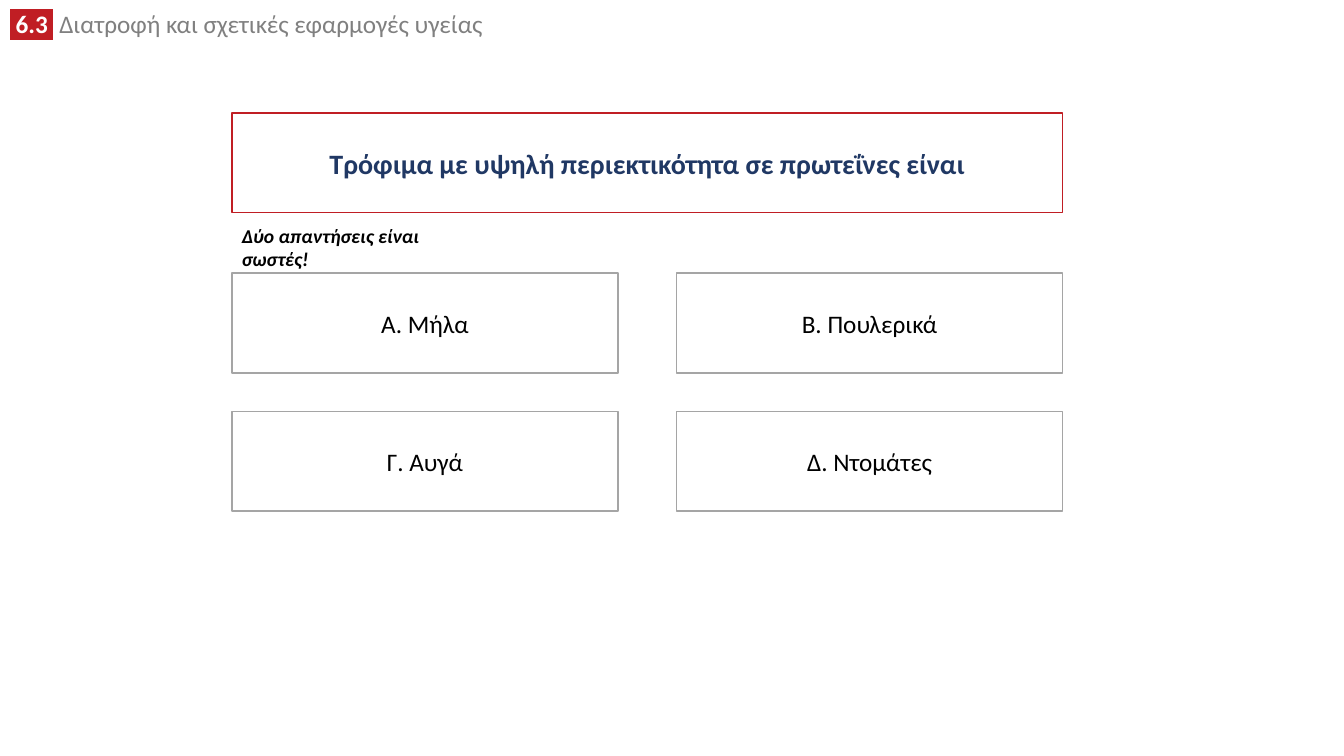
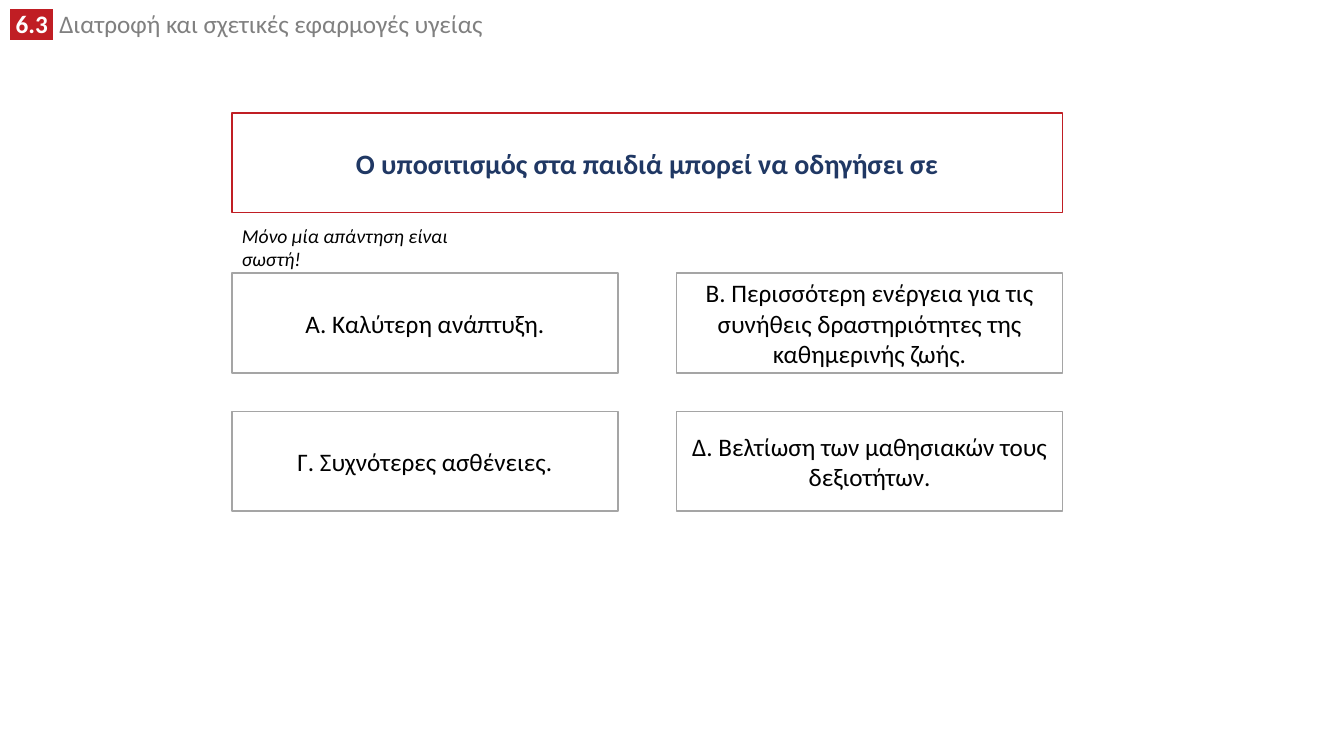
from lxml.etree import SubElement
from pptx import Presentation
from pptx.dml.color import RGBColor
from pptx.enum.shapes import MSO_SHAPE
from pptx.enum.text import MSO_ANCHOR, PP_ALIGN
from pptx.oxml import parse_xml
from pptx.oxml.ns import nsdecls, qn
from pptx.util import Inches, Pt

HUES = {
    "red": "C01E24", "navy": "203864", "gray": "808080",
    "edge": "A5A5A5", "black": "000000", "white": "FFFFFF",
}
FONT = "Calibri"
UNIT, TOPIC = " 6.3 ", " Διατροφή και σχετικές εφαρμογές υγείας"
QUIZ = [
    {
        "ask": "Τρόφιμα με υψηλή περιεκτικότητα σε πρωτεΐνες είναι",
        "hint": "Δύο απαντήσεις είναι σωστές!",
        "bold": True,
        "wide": 2.24,
        "picks": ["A. Μήλα", "B. Πουλερικά", "Γ. Αυγά", "Δ. Ντομάτες"],
    },
    {
        "ask": "Ο υποσιτισμός στα παιδιά μπορεί να οδηγήσει σε",
        "hint": "Μόνο μία απάντηση είναι σωστή!",
        "bold": False,
        "wide": 2.36,
        "picks": [
            "A. Καλύτερη ανάπτυξη.",
            "B. Περισσότερη ενέργεια για τις συνήθεις δραστηριότητες "
            "της καθημερινής ζωής.",
            "Γ. Συχνότερες ασθένειες.",
            "Δ. Βελτίωση των μαθησιακών τους δεξιοτήτων.",
        ],
    },
]
LEFT, TOP, SPAN, HIGH = 2.3, 1.12, 8.24, 0.99
GRID, COLS, CELL, GAP = 2.71, 2, 3.83, 0.38


def tint(name):
    return RGBColor.from_string(HUES[name])


def write(par, text, size, hue, bold=False, slant=False):
    run = par.add_run()
    run.text = text
    font = run.font
    font.name, font.size, font.bold, font.italic = FONT, Pt(size), bold, slant
    font.color.rgb = tint(hue)
    return run


def label(slide, x, y, w, h):
    box = slide.shapes.add_textbox(*map(Inches, (x, y, w, h)))
    box.text_frame.word_wrap = True
    return box


def panel(shape, edge, text, size, hue, bold=False):
    shape.fill.solid()
    shape.fill.fore_color.rgb = tint("white")
    shape.line.color.rgb = tint(edge)
    shape.line.width = Pt(1)
    frame = shape.text_frame
    frame.word_wrap = True
    frame.vertical_anchor = MSO_ANCHOR.MIDDLE
    par = frame.paragraphs[0]
    par.alignment = PP_ALIGN.CENTER
    write(par, text, size, hue, bold)


def header(slide, layout):
    box = label(slide, 0, 0.09, 9.52, 0.35)
    par = box.text_frame.paragraphs[0]
    par.line_spacing = 0.8
    run = write(par, UNIT, 18, "white", True)
    mark = parse_xml(f'<a:highlight {nsdecls("a")}><a:srgbClr val="{HUES["red"]}"/></a:highlight>')
    run.font.fill  
    run._r.rPr.find(qn("a:solidFill")).addnext(mark)
    write(par, TOPIC, 18, "gray")
    layout.shapes.element.append(box.element)


def question(slide, text):
    title = slide.shapes.title
    title.left, title.top, title.width, title.height = map(
        Inches, (LEFT, TOP, SPAN, HIGH))
    geom = SubElement(title.element.spPr, qn("a:prstGeom"), prst="roundRect")
    SubElement(geom, qn("a:avLst"))
    panel(title, "red", text, 20, "navy", True)


def answers(slide, picks):
    for spot, text in enumerate(picks):
        row, col = divmod(spot, COLS)
        x = LEFT + col * (SPAN - CELL)
        y = GRID + row * (HIGH + GAP)
        box = slide.shapes.add_shape(
            MSO_SHAPE.RECTANGLE, *map(Inches, (x, y, CELL, HIGH)))
        box.shadow.inherit = False
        panel(box, "edge", text, 18, "black")


def main():
    deck = Presentation()
    deck.slide_width, deck.slide_height = Inches(13.33), Inches(7.5)
    layout = deck.slide_layouts[5]
    for hold in list(layout.placeholders):
        if hold.placeholder_format.idx:
            layout.shapes.element.remove(hold.element)
    for num, item in enumerate(QUIZ):
        slide = deck.slides.add_slide(layout)
        if num == 0:
            header(slide, layout)
        question(slide, item["ask"])
        hint = label(slide, LEFT, 2.17, item["wide"], 0.34)
        write(hint.text_frame.paragraphs[0], item["hint"], 14, "black",
              item["bold"], True)
        answers(slide, item["picks"])
    deck.save("out.pptx")


if __name__ == "__main__":
    main()
